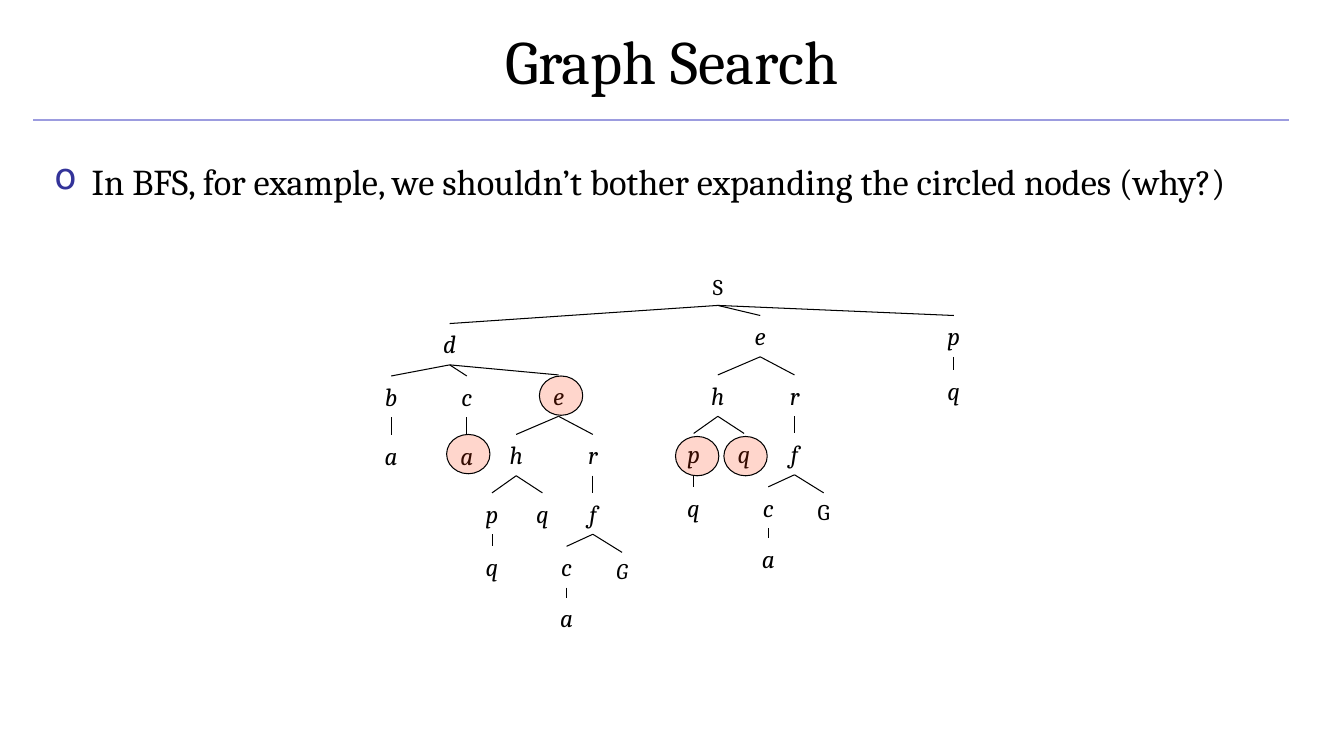
from dataclasses import dataclass

from lxml.etree import SubElement
from pptx import Presentation
from pptx.dml.color import RGBColor
from pptx.enum.shapes import MSO_CONNECTOR as Connector, MSO_SHAPE as Preset
from pptx.enum.text import MSO_ANCHOR as Anchor, PP_ALIGN as Align
from pptx.oxml.ns import qn
from pptx.util import Emu, Pt

PX = 9144  # 100 px to the inch
FONT = "Cambria"
COLORS = {"text": "000000", "rule": "9C9CDF", "bullet": "333399", "circle": "FF3300"}
BOTTOM, TOP = 2, 0  # connection sites of a rectangle


@dataclass(frozen=True)
class NodeStyle:
    width: int
    height: int
    size: int


LETTER = NodeStyle(42, 41, 18)
CAPITALS = {"S": NodeStyle(108, 37, 16), "G": NodeStyle(84, 37, 16)}


@dataclass(frozen=True)
class Node:
    label: str
    center: int
    top: int
    children: tuple["Node", ...] = ()
    italic: bool = True


@dataclass(frozen=True)
class Circle:
    left: int
    top: int


def px(value: int) -> Emu:
    return Emu(value * PX)


def rgb(name: str) -> RGBColor:
    return RGBColor.from_string(COLORS[name])


def expand_e(x: int, y: int, italic_goal: bool) -> Node:
    """Subtree below state e, with e centred at x and its top at y."""
    goal = Node("G", x + 63, y + 176, italic=italic_goal)
    c = Node("c", x + 8, y + 170, (Node("a", x + 8, y + 221),))
    f = Node("f", x + 34, y + 117, (c, goal))
    p = Node("p", x - 66, y + 117, (Node("q", x - 66, y + 170),))
    h = Node("h", x - 42, y + 59, (p, Node("q", x - 16, y + 117)))
    return Node("e", x, y, (h, Node("r", x + 34, y + 59, (f,))))


TREE = Node("S", 712, 266, (
    Node("d", 446, 321, (
        Node("b", 388, 373, (Node("a", 388, 432),)),
        Node("c", 463, 373, (Node("a", 463, 432),)),
        expand_e(554, 372, italic_goal=True),
    )),
    expand_e(754, 313, italic_goal=False),
    Node("p", 946, 313, (Node("q", 946, 367),)),
), italic=False)

CIRCLES = (Circle(535, 373), Circle(670, 433), Circle(443, 431), Circle(718, 433))


def place(shape, left: int, top: int, width: int, height: int) -> None:
    shape.left, shape.top = px(left), px(top)
    shape.width, shape.height = px(width), px(height)


def add_run(paragraph, text: str, size: int, italic: bool = False) -> None:
    run = paragraph.add_run()
    run.text = text
    run.font.name = FONT
    run.font.size = Pt(size)
    run.font.italic = italic
    run.font.color.rgb = rgb("text")


def add_text_box(slide, left: int, top: int, width: int, height: int):
    shape = slide.shapes.add_textbox(px(left), px(top), px(width), px(height))
    shape.text_frame.word_wrap = True
    return shape


def add_line(slide, color: str, width: float, start=(0, 0), end=(0, 0)):
    line = slide.shapes.add_connector(Connector.STRAIGHT, *map(px, start + end))
    line.line.color.rgb = rgb(color)
    line.line.width = Pt(width)
    SubElement(line._element.spPr, qn("a:effectLst"))
    return line


def add_title(slide) -> None:
    title = slide.shapes.title
    place(title, 0, -3, 1333, 125)
    title.text_frame.vertical_anchor = Anchor.MIDDLE
    paragraph = title.text_frame.paragraphs[0]
    paragraph.alignment = Align.CENTER
    add_run(paragraph, "Graph Search", 44)


def add_question(slide) -> None:
    paragraph = add_text_box(slide, 44, 153, 1244, 517).text_frame.paragraphs[0]
    properties = paragraph._p.get_or_add_pPr()
    properties.set("marL", str(px(37)))
    properties.set("indent", str(px(-37)))
    bullet_color = SubElement(properties, qn("a:buClr"))
    SubElement(bullet_color, qn("a:srgbClr"), val=COLORS["bullet"])
    SubElement(properties, qn("a:buChar"), char="o")
    add_run(paragraph, "In BFS, for example, we shouldn’t bother expanding "
                       "the circled nodes (why?)", 26)


def add_tree(slide, node: Node):
    """Draw a node and everything below it; return the node's box."""
    style = CAPITALS.get(node.label, LETTER)
    box = add_text_box(slide, node.center - style.width // 2, node.top,
                       style.width, style.height)
    paragraph = box.text_frame.paragraphs[0]
    paragraph.alignment = Align.CENTER
    add_run(paragraph, node.label, style.size, node.italic)
    for child in node.children:
        child_box = add_tree(slide, child)
        edge = add_line(slide, "text", 0.75)
        edge.begin_connect(box, BOTTOM)
        edge.end_connect(child_box, TOP)
    return box


def add_circle(slide, circle: Circle) -> None:
    shape = slide.shapes.add_shape(Preset.OVAL, px(circle.left), px(circle.top),
                                   px(43), px(39))
    shape.shadow.inherit = False
    shape.fill.solid()
    shape.fill.fore_color.rgb = rgb("circle")
    fill_color = shape._element.spPr.find(qn("a:solidFill"))[0]
    SubElement(fill_color, qn("a:alpha"), val="20000")
    shape.line.color.rgb = rgb("text")
    shape.line.width = Pt(0.75)


def main() -> None:
    presentation = Presentation()
    presentation.slide_width, presentation.slide_height = px(1333), px(750)
    slide = presentation.slides.add_slide(presentation.slide_layouts[5])
    add_line(slide, "rule", 1, (33, 119), (1278, 119))
    add_title(slide)
    add_question(slide)
    add_tree(slide, TREE)
    for circle in CIRCLES:
        add_circle(slide, circle)
    presentation.save("out.pptx")


if __name__ == "__main__":
    main()
